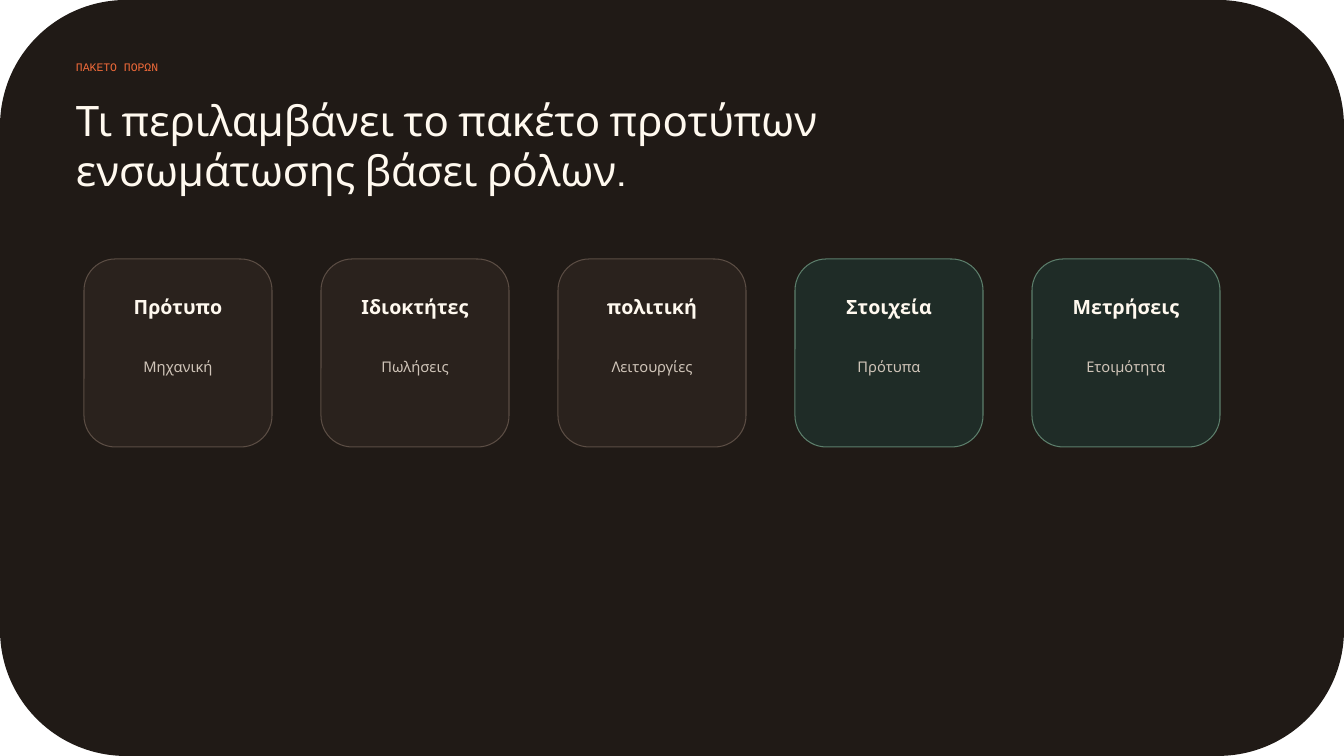
from pptx import Presentation
from pptx import util as u
from pptx.dml import color
from pptx.enum import shapes, text

PX = 914400 / 100.8
PAGE_W, PAGE_H = 1344, 756
SANS, MONO = "Cabin", "Courier New"
DARK, CREAM, SAND, ORANGE = "201A16", "FFF9EF", "CFC4B8", "F26B3A"
BROWN, GREEN = ("2A221D", "5B4D44"), ("1F2C27", "5C7E6B")
CARD_SIZE, CARD_PITCH = 188, 237

CARDS = [
    ("Πρότυπο", "Μηχανική", BROWN),
    ("Ιδιοκτήτες", "Πωλήσεις", BROWN),
    ("πολιτική", "Λειτουργίες", BROWN),
    ("Στοιχεία", "Πρότυπα", GREEN),
    ("Μετρήσεις", "Ετοιμότητα", GREEN),
]


def px(*lengths):
    return [u.Emu(round(length * PX)) for length in lengths]


def rgb(value):
    return color.RGBColor.from_string(value)


def write(box, words, size, font, tint, bold=False, align=text.PP_ALIGN.LEFT):
    frame = box.text_frame
    frame.word_wrap = True
    frame.auto_size = text.MSO_AUTO_SIZE.NONE
    frame.vertical_anchor = text.MSO_ANCHOR.TOP
    frame.margin_left = frame.margin_top = frame.margin_right = frame.margin_bottom = 0
    para = frame.paragraphs[0]
    para.alignment = align
    span = para.add_run()
    span.text = words
    span.font.size = u.Pt(size)
    span.font.name = font
    span.font.bold = bold
    span.font.color.rgb = rgb(tint)


def add_label(page, place, words, size, font, tint, **style):
    box = page.shapes.add_textbox(*px(*place))
    write(box, words, size, font, tint, **style)


def add_panel(page, place, fill, line=None):
    panel = page.shapes.add_shape(shapes.MSO_SHAPE.ROUNDED_RECTANGLE, *px(*place))
    panel.shadow.inherit = False
    panel.fill.solid()
    panel.fill.fore_color.rgb = rgb(fill)
    if line:
        panel.line.color.rgb = rgb(line)
        panel.line.width = u.Pt(0.75)
    else:
        panel.line.fill.background()


def add_heading(page, left, top):
    add_label(page, (left, top, 463, 28), "ΠΑΚΕΤΟ ΠΟΡΩΝ", 8.2, MONO, ORANGE)
    title = page.shapes.title
    title.left, title.top, title.width, title.height = px(left, top + 34, 838, 72)
    write(title, "Τι περιλαμβάνει το πακέτο προτύπων ενσωμάτωσης βάσει ρόλων.",
          30, SANS, CREAM)


def add_card(page, left, top, name, detail, look):
    center = text.PP_ALIGN.CENTER
    add_panel(page, (left, top, CARD_SIZE, CARD_SIZE), *look)
    add_label(page, (left + 19, top + 36, CARD_SIZE - 38, 33), name,
              14, SANS, CREAM, bold=True, align=center)
    add_label(page, (left + 16, top + 99, CARD_SIZE - 32, 57), detail,
              10.5, SANS, SAND, align=center)


def main():
    deck = Presentation()
    deck.slide_width, deck.slide_height = px(PAGE_W, PAGE_H)
    page = deck.slides.add_slide(deck.slide_layouts[5])

    # Rounded backdrop, placed behind the title
    add_panel(page, (0, 0, PAGE_W, PAGE_H), DARK)
    tree = page.shapes.title.element.getparent()
    tree.append(page.shapes.title.element)

    # Heading
    add_heading(page, 76, 60)

    # Row of cards
    for index, (name, detail, look) in enumerate(CARDS):
        add_card(page, 84 + index * CARD_PITCH, 259, name, detail, look)

    deck.save("out.pptx")


if __name__ == "__main__":
    main()
